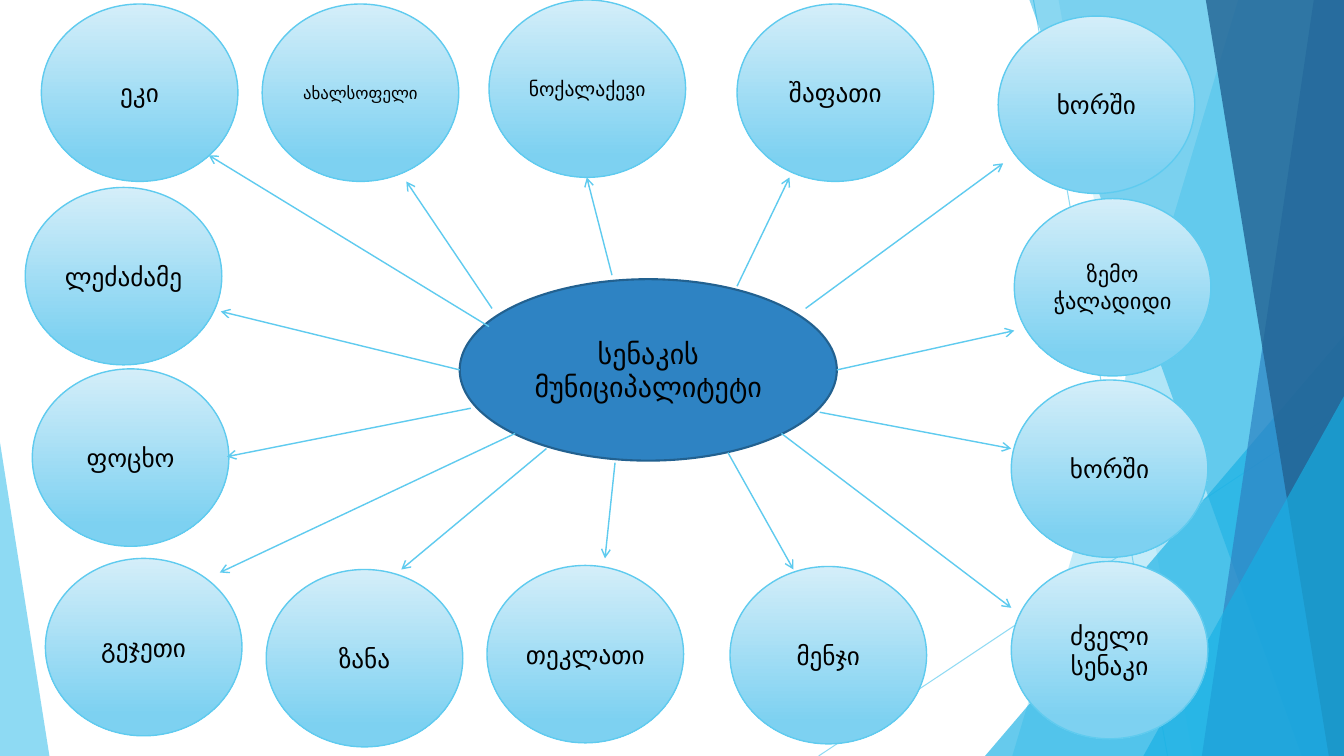
import pptx
import pptx.dml.color
import pptx.enum.dml
import pptx.enum.shapes
import pptx.enum.text
import pptx.oxml
import pptx.oxml.ns
import pptx.util
from pptx.util import Inches

RGBColor = pptx.dml.color.RGBColor
Shape = pptx.enum.shapes.MSO_SHAPE

SKY = RGBColor(0x5F, 0xCB, 0xEF)
AZURE = RGBColor(0x17, 0xB0, 0xE4)
BLUE = RGBColor(0x2E, 0x83, 0xC3)
NAVY = RGBColor(0x22, 0x62, 0x92)
HUB_EDGE = RGBColor(0x22, 0x61, 0x90)
PALE = RGBColor(0xD4, 0xEE, 0xF9)
LIGHT = RGBColor(0x7D, 0xD1, 0xF1)
BLACK = RGBColor(0, 0, 0)

WIDTH, HEIGHT = 13.33, 7.5
VILLAGE_WIDTH, VILLAGE_HEIGHT = 1.95, 1.76

# Top x, bottom x, colour and opacity of panels reaching the right edge
PANELS_BEHIND = [(12.28, 10.04, SKY, 36), (10.5, 11.83, SKY, 20)]
PANELS_FRONT = [
    (10.21, 12.91, AZURE, 50),
    (13.03, 11.92, BLUE, 70),
    (11.96, 13.18, NAVY, 80),
]

# Name, left, top, text size
VILLAGES = [
    ("ლეძაძამე", 0.25, 1.86, 18),
    ("შაფათი", 7.31, 0.04, 18),
    ("ხორში", 9.9, 0.16, 18),
    ("ზემო ჭალადიდი", 10.06, 1.97, 16),
    ("ნოქალაქევი", 4.85, 0, 14),
    ("ახალსოფელი", 2.6, 0.04, 12),
    ("ეკი", 0.41, 0.04, 18),
    ("მენჯი", 7.24, 5.62, 18),
    ("ძველი სენაკი", 10.03, 5.57, 18),
    ("ხორში", 10.03, 3.77, 18),
    ("ფოცხო", 0.32, 3.66, 18),
    ("გეჯეთი", 0.45, 5.54, 18),
    ("ზანა", 2.64, 5.65, 18),
    ("თეკლათი", 4.83, 5.61, 18),
]

# Start at the municipality, end at the village
ARROWS = [
    ((6.07, 2.73), (5.82, 1.76)),
    ((7.31, 2.84), (7.83, 1.76)),
    ((4.88, 3.06), (4.03, 1.8)),
    ((4.85, 3.24), (2.07, 1.54)),
    ((4.67, 4.05), (2.25, 4.53)),
    ((5.11, 4.3), (2.18, 5.68)),
    ((4.56, 3.67), (2.19, 3.09)),
    ((7.99, 3.06), (9.95, 1.62)),
    ((8.3, 3.67), (10.06, 3.28)),
    ((8.13, 4.09), (10.03, 4.45)),
    ((7.75, 4.3), (10.03, 6.03)),
    ((7.22, 4.49), (7.87, 5.65)),
    ((6.1, 4.59), (6, 5.54)),
    ((5.42, 4.45), (3.98, 5.65)),
]


def add_child(parent, tag, **attributes):
    child = pptx.oxml.ns.qn(tag)
    element = parent.makeelement(child, attributes)
    parent.append(element)
    return element


class MapSlide:
    font = "Cabin"

    def __init__(self, slide):
        self.shapes = slide.shapes

    def set_opacity(self, fill, element, colour, percent):
        fill.solid()
        fill.fore_color.rgb = colour
        rgb = next(element.iter(pptx.oxml.ns.qn("a:srgbClr")))
        add_child(rgb, "a:alpha", val=str(percent * 1000))

    def tint(self, shape, colour, percent):
        """Give a decoration a translucent fill and no outline."""
        shape.shadow.inherit = False
        self.set_opacity(shape.fill, shape._element.spPr, colour, percent)
        shape.line.fill.background()

    def panel(self, top_x, bottom_x, colour, percent):
        outline = self.shapes.build_freeform(Inches(top_x), 0)
        corners = [(WIDTH, 0), (WIDTH, HEIGHT), (bottom_x, HEIGHT)]
        outline.add_line_segments([(Inches(x), Inches(y)) for x, y in corners])
        self.tint(outline.convert_to_shape(), colour, percent)

    def triangle(self, left, top, width, apex, colour, percent):
        """Add a triangle that stands on the bottom edge of the slide."""
        shape = self.shapes.add_shape(
            Shape.ISOSCELES_TRIANGLE,
            Inches(left), Inches(top), Inches(width), Inches(HEIGHT - top))
        shape.adjustments[0] = apex
        self.tint(shape, colour, percent)

    def line(self, start, end, weight):
        connector = self.shapes.add_connector(
            pptx.enum.shapes.MSO_CONNECTOR.STRAIGHT,
            *(Inches(value) for value in (*start, *end)))
        connector.line.width = pptx.util.Pt(weight)
        connector.line.color.rgb = SKY
        add_child(connector._element.spPr, "a:effectLst")
        return connector

    def faint_line(self, start, end):
        connector = self.line(start, end, 0.75)
        self.set_opacity(connector.line.fill, connector.line._ln, SKY, 70)

    def arrow(self, start, end):
        connector = self.line(start, end, 1)
        add_child(connector.line._ln, "a:tailEnd", type="arrow")

    def ellipse(self, text, left, top, width, height, size, edge, weight):
        shape = self.shapes.add_shape(
            Shape.OVAL, Inches(left), Inches(top), Inches(width), Inches(height))
        shape.shadow.inherit = False
        shape.line.color.rgb = edge
        shape.line.width = pptx.util.Pt(weight)
        frame = shape.text_frame
        frame.word_wrap = True
        frame.vertical_anchor = pptx.enum.text.MSO_ANCHOR.MIDDLE
        frame.text = text
        paragraph = frame.paragraphs[0]
        paragraph.alignment = pptx.enum.text.PP_ALIGN.CENTER
        paragraph.font.name = self.font
        paragraph.font.size = pptx.util.Pt(size)
        paragraph.font.color.rgb = BLACK
        return shape

    def village(self, name, left, top, size):
        shape = self.ellipse(
            name, left, top, VILLAGE_WIDTH, VILLAGE_HEIGHT, size, SKY, 1)
        shape.fill.gradient()
        shape.fill.gradient_angle = 270
        stops = zip(shape.fill.gradient_stops, (PALE, LIGHT), (0, 0.88))
        for stop, colour, position in stops:
            stop.color.rgb = colour
            stop.position = position

    def municipality(self, name):
        shape = self.ellipse(name, 4.56, 2.77, 3.74, 1.8, 20, HUB_EDGE, 1.5)
        shape.fill.solid()
        shape.fill.fore_color.rgb = BLUE


def main():
    presentation = pptx.Presentation()
    presentation.slide_width = Inches(WIDTH)
    presentation.slide_height = Inches(HEIGHT)
    senaki = MapSlide(presentation.slides.add_slide(presentation.slide_layouts[6]))

    senaki.faint_line((10.25, 0), (11.58, HEIGHT))
    senaki.faint_line((WIDTH, 4.03), (8.12, HEIGHT))
    for panel in PANELS_BEHIND:
        senaki.panel(*panel)
    senaki.triangle(9.77, 3.33, 3.56, 1, AZURE, 66)
    for panel in PANELS_FRONT:
        senaki.panel(*panel)
    senaki.triangle(11.34, 3.93, 1.99, 1, AZURE, 66)
    senaki.triangle(0, 4.39, 0.49, 0, SKY, 70)

    for village in VILLAGES:
        senaki.village(*village)
    senaki.municipality("სენაკის მუნიციპალიტეტი")
    for start, end in ARROWS:
        senaki.arrow(start, end)

    presentation.save("out.pptx")


if __name__ == "__main__":
    main()
